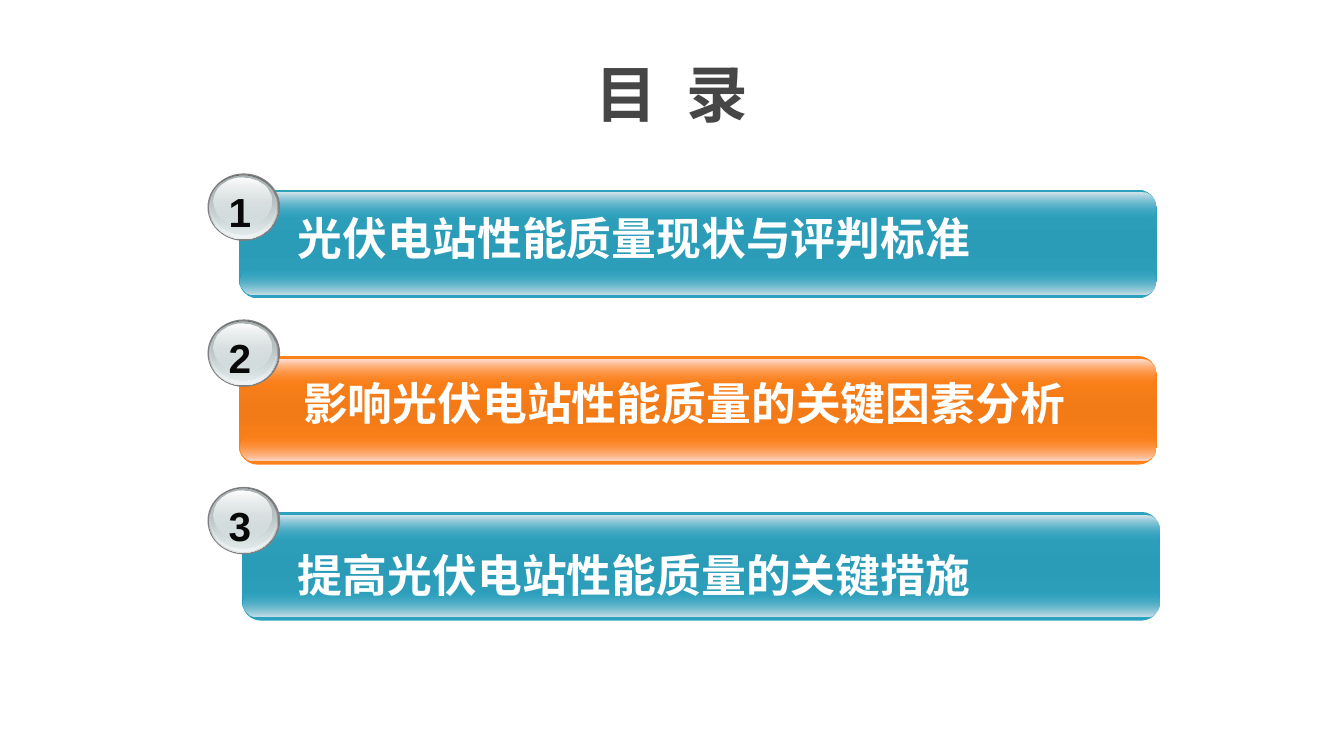
import pptx
import pptx.util
import pptx.oxml
import pptx.oxml.ns
from pptx.dml.color import RGBColor
from pptx.enum.shapes import MSO_SHAPE
from pptx.enum.text import MSO_ANCHOR, MSO_AUTO_SIZE, PP_ALIGN
from pptx.util import Cm

CJK_FONT = "Noto Sans CJK SC"
WHITE = RGBColor(0xFF, 0xFF, 0xFF)
TITLE_GREY = RGBColor(0x46, 0x46, 0x46)
NUMBER_BLACK = RGBColor(0x08, 0x08, 0x08)
RIM_GREY = RGBColor(0x80, 0x80, 0x80)
STEEL = RGBColor(0x63, 0x68, 0x69)
SILVER = RGBColor(0xAA, 0xB2, 0xB3)
PEARL = RGBColor(0xD6, 0xE1, 0xE2)
PALE = RGBColor(0xF1, 0xF5, 0xF5)

# Bar palettes: edge, middle, top gloss, bottom gloss
TEAL = (RGBColor(0x2D, 0xA2, 0xBF), RGBColor(0x2B, 0x9C, 0xB8),
        RGBColor(0xD7, 0xE5, 0xEC), RGBColor(0xCC, 0xDF, 0xE7))
ORANGE = (RGBColor(0xFF, 0x81, 0x19), RGBColor(0xF2, 0x7B, 0x18),
          RGBColor(0xFF, 0xDF, 0xD6), RGBColor(0xFF, 0xD7, 0xCB))

# Badge layers: left and top offset, width, height (cm), (colour, opacity %) stops
BADGE_LAYERS = [
    (0, 0, 1.83, 1.7, [(RIM_GREY, 100)]),
    (0.03, 0.03, 1.75, 1.63, [(STEEL, 100), (PEARL, 100)]),
    (0.05, 0.03, 1.7, 1.6, [(PEARL, 0), (PALE, 100)]),
    (0.08, 0.05, 1.63, 1.5, [(SILVER, 100), (PEARL, 48)]),
    (0.15, 0.1, 1.45, 1.19, [(WHITE, 100), (PEARL, 38)]),
]
BADGE_LEFT = 5.23

# Entries: text, palette, bar left and top, badge top, text left, top and height, line spacing
ENTRIES = [
    ("光伏电站性能质量现状与评判标准", TEAL, 6.02, 4.78, 4.37, 7.21, 5.16, 1.68, 1),
    ("影响光伏电站性能质量的关键因素分析", ORANGE, 6.02, 8.97, 8.05, 7.34, 9.32, 1.68, 1),
    ("提高光伏电站性能质量的关键措施", TEAL, 6.1, 12.9, 12.27, 7.21, 12.29, 2.62, 2),
]


def fill_downwards(shape, stops):
    """Fill with evenly spaced (colour, opacity) stops from top to bottom."""
    if len(stops) == 1:
        shape.fill.solid()
        shape.fill.fore_color.rgb = stops[0][0]
        return
    stop_xml = "".join(
        f'<a:gs pos="{100000 * i // (len(stops) - 1)}"><a:srgbClr val="{colour}">'
        f'<a:alpha val="{opacity * 1000}"/></a:srgbClr></a:gs>'
        for i, (colour, opacity) in enumerate(stops))
    gradient = pptx.oxml.parse_xml(
        f'<a:gradFill {pptx.oxml.ns.nsdecls("a")} rotWithShape="1">'
        f'<a:gsLst>{stop_xml}</a:gsLst><a:lin ang="5400000" scaled="0"/></a:gradFill>')
    shape.fill.background()
    properties = shape._element.spPr
    properties.replace(properties.find(pptx.oxml.ns.qn("a:noFill")), gradient)


def add_layer(slide, kind, left, top, width, height, stops, rounding=None):
    layer = slide.shapes.add_shape(kind, Cm(left), Cm(top), Cm(width), Cm(height))
    layer.shadow.inherit = False
    layer.line.fill.background()
    if rounding is not None:
        layer.adjustments[0] = rounding
    fill_downwards(layer, stops)


def add_label(slide, left, top, width, height, words, font_name, size, colour):
    """Add bold text in a box that grows with it; return its paragraph."""
    label = slide.shapes.add_textbox(Cm(left), Cm(top), Cm(width), Cm(height))
    frame = label.text_frame
    frame.word_wrap = True
    frame.auto_size = MSO_AUTO_SIZE.SHAPE_TO_FIT_TEXT
    frame.margin_left = frame.margin_right = Cm(0.3)
    frame.margin_top = frame.margin_bottom = Cm(0.15)
    paragraph = frame.paragraphs[0]
    for word in words:
        run = paragraph.add_run()
        run.text = word
        # East Asian glyphs take their typeface from a:ea
        east_asian = pptx.oxml.parse_xml(
            f'<a:ea {pptx.oxml.ns.nsdecls("a")} typeface="{font_name}"/>')
        run._r.get_or_add_rPr().append(east_asian)
    paragraph.font.name = font_name
    paragraph.font.size = pptx.util.Pt(size)
    paragraph.font.bold = True
    paragraph.font.color.rgb = colour
    return paragraph


def add_title(slide):
    title = add_label(slide, 1.7, 0.76, 30.48, 3.18, ["目 ", "录"], CJK_FONT, 44, TITLE_GREY)
    title.alignment = PP_ALIGN.CENTER
    # Widen the gap between the two characters
    title.runs[0]._r.get_or_add_rPr().set("spc", "550")
    frame = title._parent
    frame.auto_size = MSO_AUTO_SIZE.NONE
    frame.vertical_anchor = MSO_ANCHOR.MIDDLE


def add_bar(slide, left, top, palette):
    edge, middle, top_gloss, bottom_gloss = palette
    rounded = MSO_SHAPE.ROUNDED_RECTANGLE
    add_layer(slide, rounded, left, top, 23.14, 2.74,
              [(edge, 100), (middle, 100), (edge, 100)], 0.175)
    add_layer(slide, rounded, left + 0.05, top + 1.98, 23.06, 0.66,
              [(edge, 0), (bottom_gloss, 100)], 0.5)
    add_layer(slide, rounded, left + 0.05, top + 0.08, 23.06, 0.66,
              [(top_gloss, 100), (edge, 0)], 0.5)


def add_badge(slide, top, number):
    for dx, dy, width, height, stops in BADGE_LAYERS:
        add_layer(slide, MSO_SHAPE.OVAL, BADGE_LEFT + dx, top + dy, width, height, stops)
    digit = add_label(slide, BADGE_LEFT + 0.23, top + 0.2, 1.14, 1.55,
                      [str(number)], "Arial", 29, NUMBER_BLACK)
    digit.alignment = PP_ALIGN.CENTER


def main():
    deck = pptx.Presentation()
    deck.slide_width, deck.slide_height = Cm(33.87), Cm(19.05)
    slide = deck.slides.add_slide(deck.slide_layouts[6])

    add_title(slide)

    # Numbered contents
    for number, entry in enumerate(ENTRIES, start=1):
        (topic, palette, bar_left, bar_top, badge_top,
         text_left, text_top, text_height, spacing) = entry
        add_bar(slide, bar_left, bar_top, palette)
        add_badge(slide, badge_top, number)
        topic_line = add_label(slide, text_left, text_top, 20.88, text_height,
                               [topic], CJK_FONT, 32, WHITE)
        topic_line.line_spacing = spacing

    deck.save("out.pptx")


if __name__ == "__main__":
    main()
